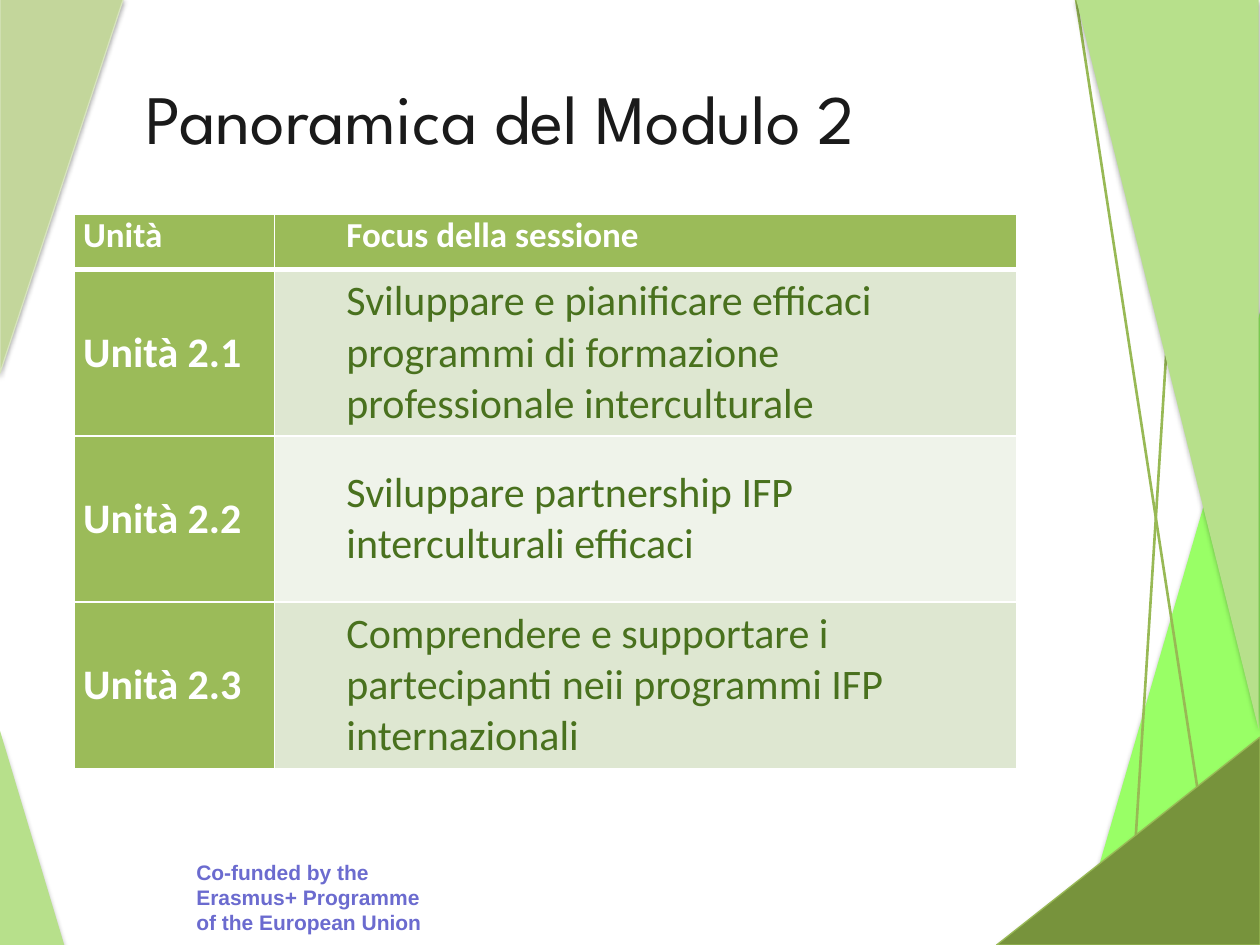
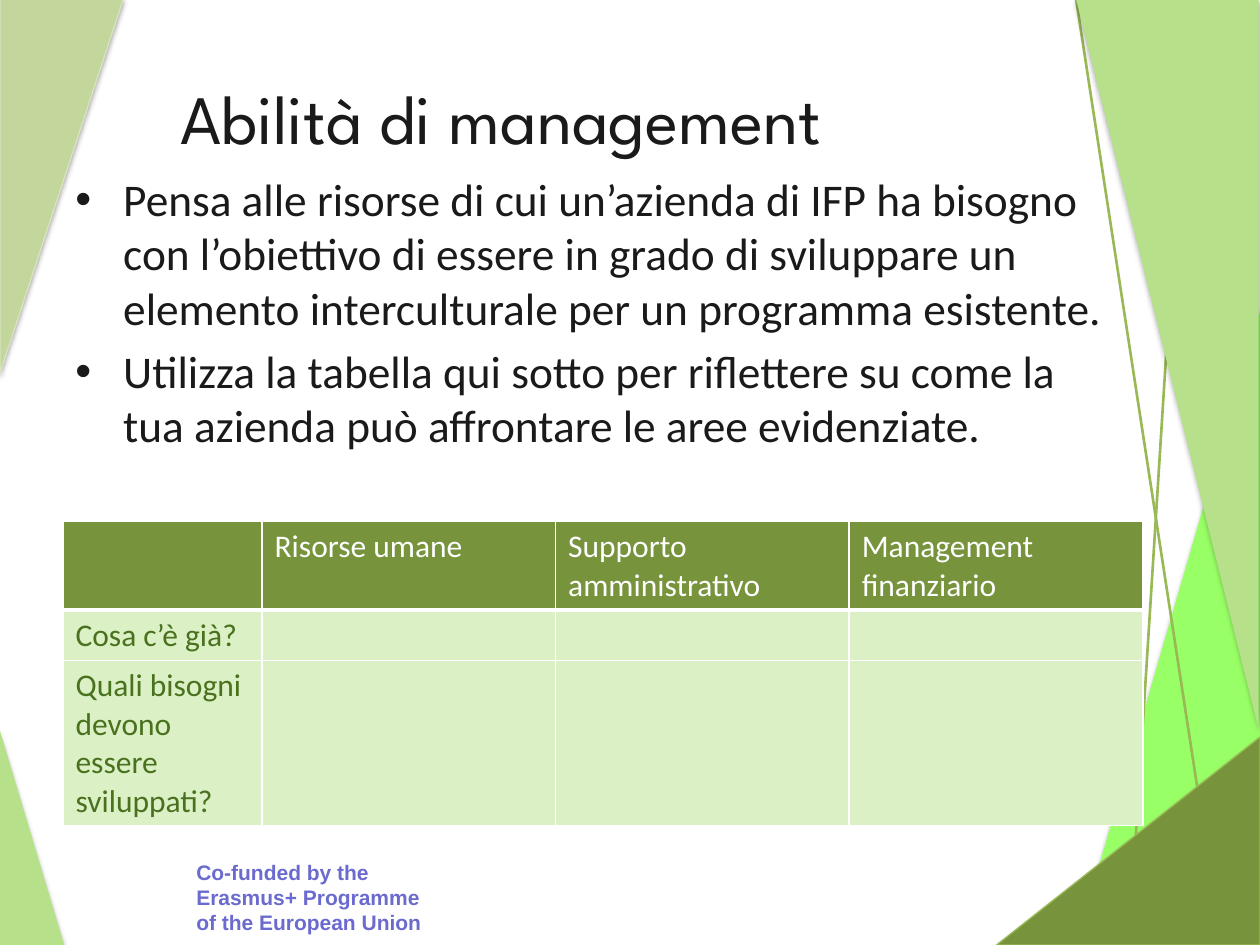
from lxml.etree import SubElement
from pptx import Presentation
from pptx.dml.color import RGBColor
from pptx.enum.shapes import MSO_CONNECTOR as Connector, MSO_SHAPE as Shape
from pptx.enum.text import MSO_ANCHOR as Anchor, PP_ALIGN as Align
from pptx.oxml.ns import qn
from pptx.util import Emu, Pt

PX = 9144
COLORS = {
    "white": "FFFFFF", "ink": "1A1A1A", "text": "49711E", "funding": "6B6BCF",
    "neon": "99FF66", "light": "B7E08B", "sage": "C3D69B", "sage_edge": "D7E4BD",
    "olive": "77933C", "stroke": "98B955", "unit": "9BBB59",
    "band_dark": "DEE7D1", "band_light": "EFF3EA", "skill": "DBF0C5", "shadow": "000000",
}


def px(length):
    return Emu(length * PX)


def rgb(name):
    return RGBColor.from_string(COLORS[name])


class Deck:
    title_font = "League Spartan"
    body_font = "Calibri"
    footer_font = "Arial"

    def __init__(self):
        self.prs = Presentation()
        self.prs.slide_width, self.prs.slide_height = px(1000), px(750)
        self.slide = None

    def add_slide(self, title, left, width):
        self.slide = self.prs.slides.add_slide(self.prs.slide_layouts[6])
        self.decorate()
        self.text((left, 30, width, 125), [title], self.title_font, 39.6, "ink",
                  align=Align.CENTER, anchor=Anchor.MIDDLE)

    def decorate(self):
        self.triangle((854, 241, 148, 509), "neon", "h", opacity=38, distance=1.6)
        self.text((146, 677, 200, 71),
                  ["Co-funded by the Erasmus+ Programme of the European Union"],
                  self.footer_font, 12, "funding", bold=True)
        self.triangle((0, 580, 51, 170), "light")
        self.triangle((0, -1, 98, 297), "sage", "v", edge="sage_edge")
        self.line((896, 750), (930, 210))
        self.line((965, 721), (854, -1))
        self.triangle((854, -1, 145, 580), "light", "hv")
        self.triangle((791, 585, 209, 165), "olive", "h", edge="stroke")

    def triangle(self, box, fill, flips="", edge=None, opacity=35, distance=1.8):
        triangle = self.slide.shapes.add_shape(Shape.RIGHT_TRIANGLE, *map(px, box))
        properties = triangle._element.spPr
        for axis in flips:
            properties.find(qn("a:xfrm")).set("flip" + axis.upper(), "1")
        triangle.fill.solid()
        triangle.fill.fore_color.rgb = rgb(fill)
        if edge:
            triangle.line.color.rgb = rgb(edge)
            triangle.line.width = Pt(0.75)
        else:
            triangle.line.fill.background()
        triangle.shadow.inherit = False
        shadow = SubElement(properties.find(qn("a:effectLst")), qn("a:outerShdw"),
                            blurRad=str(Pt(3.1)), dist=str(Pt(distance)),
                            dir="5400000", rotWithShape="0")
        color = SubElement(shadow, qn("a:srgbClr"), val=COLORS["shadow"])
        SubElement(color, qn("a:alpha"), val=str(opacity * 1000))

    def line(self, start, end):
        line = self.slide.shapes.add_connector(Connector.STRAIGHT, *map(px, start + end))
        line.line.color.rgb = rgb("stroke")
        line.line.width = Pt(1.5)
        SubElement(line._element.spPr, qn("a:effectLst"))

    def text(self, box, lines, font, size, color, bold=False, align=Align.LEFT,
             anchor=Anchor.TOP, bullet=False):
        frame = self.slide.shapes.add_textbox(*map(px, box)).text_frame
        frame.word_wrap = True
        frame.vertical_anchor = anchor
        frame.text = "\n".join(lines)
        for index, paragraph in enumerate(frame.paragraphs):
            paragraph.alignment = align
            if index:
                paragraph.space_before = Pt(5)
            if bullet:
                self.indent(paragraph, 38, -38)
                properties = paragraph._p.get_or_add_pPr()
                SubElement(properties, qn("a:buFont"), typeface="Arial")
                SubElement(properties, qn("a:buChar"), char="•")
            self.style(paragraph, font, size, color, bold)

    def indent(self, paragraph, margin, first=0):
        properties = paragraph._p.get_or_add_pPr()
        properties.set("marL", str(px(margin)))
        properties.set("indent", str(px(first)))

    def style(self, paragraph, font, size, color, bold):
        for run in paragraph.runs:
            run.font.name = font
            run.font.size = Pt(size)
            run.font.bold = bold
            run.font.color.rgb = rgb(color)

    def table(self, left, top, widths, heights, rows):
        table = self.slide.shapes.add_table(
            len(heights), len(widths), *map(px, (left, top, sum(widths), sum(heights)))).table
        table.first_row = table.horz_banding = False
        for column, width in zip(table.columns, widths):
            column.width = px(width)
        for row, height in zip(table.rows, heights):
            row.height = px(height)
        for r, row in enumerate(rows):
            for c, label in enumerate(row):
                cell = table.cell(r, c)
                cell.text = label
                self.borders(cell, top=3 if r == 1 else 1, bottom=3 if r == 0 else 1)
        return table

    def borders(self, cell, top, bottom):
        properties = cell._tc.get_or_add_tcPr()
        for side, width in zip("LRTB", (1, 1, top, bottom)):
            border = SubElement(properties, qn("a:ln" + side), w=str(Pt(width)))
            fill = SubElement(border, qn("a:solidFill"))
            SubElement(fill, qn("a:srgbClr"), val=COLORS["white"])

    def paint(self, cell, fill, size, color, bold=False):
        cell.fill.solid()
        cell.fill.fore_color.rgb = rgb(fill)
        self.style(cell.text_frame.paragraphs[0], self.body_font, size, color, bold)


def module_overview(deck):
    deck.add_slide("Panoramica del Modulo 2", 59, 677)
    units = deck.table(59, 170, (159, 589), (44, 132, 132, 132), [
        ("Unità", "Focus della sessione"),
        ("Unità 2.1", "Sviluppare e pianificare efficaci programmi di formazione "
                      "professionale interculturale"),
        ("Unità 2.2", "Sviluppare partnership IFP interculturali efficaci"),
        ("Unità 2.3", "Comprendere e supportare i partecipanti neii programmi IFP "
                      "internazionali"),
    ])
    for r, row in enumerate(units.rows):
        for c, cell in enumerate(row.cells):
            cell.margin_left = cell.margin_right = px(7)
            cell.margin_top = cell.margin_bottom = 0
            if r:
                cell.vertical_anchor = Anchor.MIDDLE
            if c:
                deck.indent(cell.text_frame.paragraphs[0], 50)
            if r and c:
                deck.paint(cell, "band_dark" if r % 2 else "band_light", 24, "text")
            else:
                deck.paint(cell, "unit", 24 if r else 20, "white", bold=True)


def management_skills(deck):
    deck.add_slide("Abilità di management", 74, 647)
    deck.text((50, 131, 836, 268), [
        "Pensa alle risorse di cui un’azienda di IFP ha bisogno con l’obiettivo di essere "
        "in grado di sviluppare un elemento interculturale per un programma esistente.",
        "Utilizza la tabella qui sotto per riflettere su come la tua azienda può "
        "affrontare le aree evidenziate.",
    ], deck.body_font, 25.9, "ink", bullet=True)
    resources = deck.table(50, 414, (158, 233, 233, 233), (70, 40, 131), [
        ("", "Risorse umane", "Supporto amministrativo", "Management finanziario"),
        ("Cosa c’è già?", "", "", ""),
        ("Quali bisogni devono essere sviluppati?", "", "", ""),
    ])
    for r, row in enumerate(resources.rows):
        for cell in row.cells:
            deck.paint(cell, "skill" if r else "olive", 18, "text" if r else "white")


def main():
    deck = Deck()
    module_overview(deck)
    management_skills(deck)
    deck.prs.save("out.pptx")


if __name__ == "__main__":
    main()
